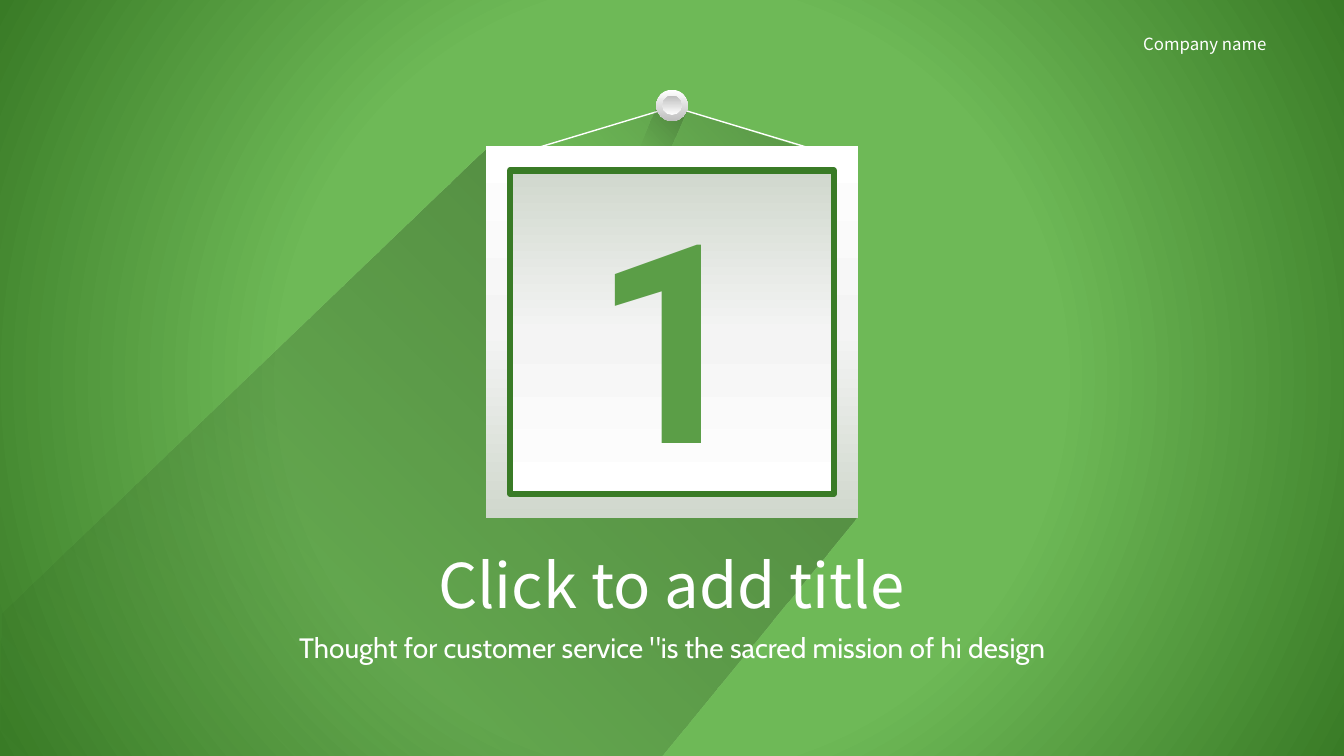
from lxml.etree import SubElement
from pptx import Presentation
from pptx.dml.color import RGBColor
from pptx.enum.shapes import MSO_SHAPE as SHAPE
from pptx.enum.text import MSO_ANCHOR, MSO_AUTO_SIZE, PP_ALIGN
from pptx.oxml.ns import qn
from pptx.util import Inches, Pt

WHITE, DARK_GREEN, DIGIT_GREEN = "FFFFFF", "397B26", "5B9E47"
BACKDROP = [(50, "6EB957", 100), (100, DARK_GREEN, 100)]
LONG_SHADE = [(0, "000000", 30), (100, "000000", 0)]
SOFT_SHADE = [(0, "000000", 20), (100, "000000", 0)]
METAL = [(0, WHITE, 100), (100, "BFBFBF", 100)]
PAPER = [(0, WHITE, 100), (50, "F4F4F4", 100), (100, "D0D8CD", 100)]

HEADING_FONT, BODY_FONT, DIGIT_FONT = "Noto Sans CJK SC", "Cabin", "Roboto"
LABELS = [
    ("Company name", (11.24, 0.29, 1.56, 0.3), 12, HEADING_FONT, PP_ALIGN.LEFT),
    ("Click to add title", (4.13, 5.38, 5.06, 0.84), 44, HEADING_FONT, PP_ALIGN.CENTER),
    ('Thought for customer service "is the sacred mission of hi design',
     (2.83, 6.21, 7.68, 0.44), 20, BODY_FONT, PP_ALIGN.CENTER),
]
FRAME_SHADOW = [(4.81, 1.48), (8.49, 5.13), (6.55, 7.5), (0, 7.5), (0.01, 6.08)]
PIN_SHADOW = [(6.34, 1.46), (6.52, 1.03), (6.81, 1.1), (6.65, 1.46)]
STRING_SHADE, STRING = (5.34, 1.06, 2.65, 0.4), (5.35, 1.06, 2.65, 0.4)
PIN_CENTER = (6.665, 1.045)
PIN_RINGS = [(0.31, 90), (0.19, 270)]
FRAME_CENTER = (6.665, 3.295)
FRAME_SIZE, CARD_SIZE = 3.69, 3.21


def color(value):
    return RGBColor.from_string(value)


def paint_gradient(fill, parent, stops, angle=None):
    fill.gradient()
    gradient = next(parent.iter(qn("a:gradFill")))
    for child in list(gradient):
        gradient.remove(child)
    stop_list = SubElement(gradient, qn("a:gsLst"))
    for position, value, opacity in stops:
        stop = SubElement(stop_list, qn("a:gs"), pos=str(position * 1000))
        tint = SubElement(stop, qn("a:srgbClr"), val=value)
        if opacity < 100:
            SubElement(tint, qn("a:alpha"), val=str(opacity * 1000))
    if angle is None:
        circle = SubElement(gradient, qn("a:path"), path="circle")
        SubElement(circle, qn("a:fillToRect"), l="50000", t="50000", r="50000", b="50000")
    else:
        SubElement(gradient, qn("a:lin"), ang=str(angle * 60000), scaled="0")


def finish(shape, stops, angle, line=None, width=1):
    shape.shadow.inherit = False
    if stops:
        paint_gradient(shape.fill, shape._element.spPr, stops, angle)
    else:
        shape.fill.background()
    if line:
        shape.line.color.rgb = color(line)
        shape.line.width = Pt(width)
    else:
        shape.line.fill.background()
    return shape


def add_shape(kind, place, stops=None, angle=0, line=None, width=1):
    shape = page.shapes.add_shape(kind, *map(Inches, place))
    return finish(shape, stops, angle, line, width)


def add_outline(points, stops):
    corners = [(Inches(x), Inches(y)) for x, y in points]
    builder = page.shapes.build_freeform(*corners[0], scale=1.0)
    builder.add_line_segments(corners[1:], close=True)
    finish(builder.convert_to_shape(), stops, 135)


def centered(center, size):
    return center[0] - size / 2, center[1] - size / 2, size, size


def write(frame, text, size, font, align, value, bold=False):
    frame.text = text
    para = frame.paragraphs[0]
    para.alignment = align
    span = para.runs[0]
    span.font.size = Pt(size)
    span.font.name = font
    span.font.bold = bold
    span.font.color.rgb = color(value)


def add_label(text, place, size, font, align):
    frame = page.shapes.add_textbox(*map(Inches, place)).text_frame
    frame.word_wrap = False
    frame.auto_size = MSO_AUTO_SIZE.SHAPE_TO_FIT_TEXT
    write(frame, text, size, font, align, WHITE)


deck = Presentation()
deck.slide_width, deck.slide_height = Inches(13.33), Inches(7.5)
page = deck.slides.add_slide(deck.slide_layouts[6])
paint_gradient(page.background.fill, page._element, BACKDROP)

add_outline(FRAME_SHADOW, LONG_SHADE)
for label in LABELS:
    add_label(*label)

add_shape(SHAPE.ISOSCELES_TRIANGLE, STRING_SHADE, SOFT_SHADE, 135)
add_shape(SHAPE.ISOSCELES_TRIANGLE, STRING, line=WHITE)
add_outline(PIN_SHADOW, SOFT_SHADE)
for diameter, angle in PIN_RINGS:
    add_shape(SHAPE.OVAL, centered(PIN_CENTER, diameter), METAL, angle)

add_shape(SHAPE.RECTANGLE, centered(FRAME_CENTER, FRAME_SIZE), PAPER, 90)
card = add_shape(SHAPE.RECTANGLE, centered(FRAME_CENTER, CARD_SIZE), PAPER, 270, DARK_GREEN, 4.5)
card.text_frame.vertical_anchor = MSO_ANCHOR.MIDDLE
write(card.text_frame, "1", 199, DIGIT_FONT, PP_ALIGN.CENTER, DIGIT_GREEN, True)

deck.save("out.pptx")
